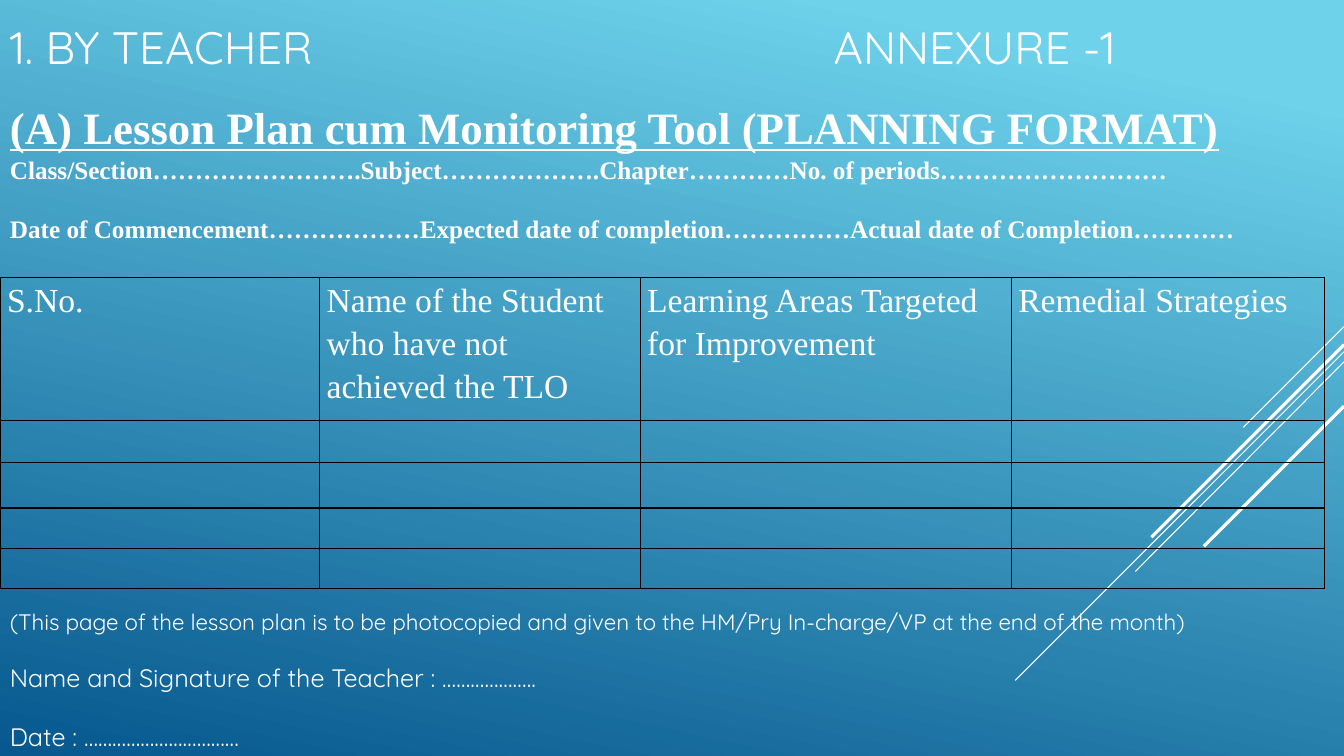
import pptx
import pptx.dml.color
import pptx.enum.shapes
import pptx.enum.text
import pptx.oxml
import pptx.oxml.ns
import pptx.util

PX = 9144  # 100 px to the inch
WHITE = pptx.dml.color.RGBColor(0xFF, 0xFF, 0xFF)
SKY = pptx.dml.color.RGBColor(0x6E, 0xD2, 0xEB)
DEEP_BLUE = pptx.dml.color.RGBColor(0x06, 0x58, 0x8E)
BORDER_HEX = "000000"
SANS = "Quicksand"
SERIF = "Times New Roman"

# x1, y1, x2, y2, width in points
RAYS = [
    (1333, 324, 1233, 424, 0.75),
    (1333, 349, 1007, 675, 0.75),
    (1333, 359, 1126, 567, 0.75),
    (1333, 342, 1142, 533, 2.25),
    (1333, 403, 1194, 542, 2.25),
]
COLUMN_WIDTHS = [317, 318, 368, 311]
ROW_HEIGHTS = [142, 42, 45, 40, 40]
HEADERS = [
    "S.No.",
    "Name of the Student who have not achieved the TLO",
    "Learning Areas Targeted for Improvement",
    "Remedial Strategies",
]


def px(length):
    return pptx.util.Emu(length * PX)


def xml_element(tag, **attributes):
    element = pptx.oxml.parse_xml(f"<{tag} {pptx.oxml.ns.nsdecls('a')}/>")
    for name, value in attributes.items():
        element.set(name, str(value))
    return element


def set_background(slide):
    fill = slide.background.fill
    fill.gradient()
    fill.gradient_angle = 258
    for stop, color, position in zip(fill.gradient_stops, (SKY, DEEP_BLUE), (0.1, 1)):
        stop.color.rgb = color
        stop.position = position


def add_ray(slide, x1, y1, x2, y2, width):
    ray = slide.shapes.add_connector(
        pptx.enum.shapes.MSO_CONNECTOR.STRAIGHT, px(x1), px(y1), px(x2), px(y2))
    ray.line.color.rgb = WHITE
    ray.line.width = pptx.util.Pt(width)
    ray._element.spPr.append(xml_element("a:effectLst"))


def style_paragraph(paragraph, font_name, size, bold=False, underline=False):
    for run in paragraph.runs:
        run.font.name = font_name
        run.font.size = pptx.util.Pt(size)
        run.font.bold = bold
        run.font.underline = underline
        run.font.color.rgb = WHITE


def add_text(slide, box, lines, font_name, anchor, bold=False, align=None):
    """Each line is (text, size, space before, underline)."""
    shape = slide.shapes.add_textbox(*map(px, box))
    frame = shape.text_frame
    frame.word_wrap = True
    frame.vertical_anchor = anchor
    frame.text = "\n".join(line[0] for line in lines)
    for paragraph, (_, size, gap, underline) in zip(frame.paragraphs, lines):
        paragraph.alignment = align
        paragraph.space_before = pptx.util.Pt(gap)
        style_paragraph(paragraph, font_name, size, bold, underline)
    return shape


def add_tab_stop(paragraph, position):
    tabs = xml_element("a:tabLst")
    tabs.append(xml_element("a:tab", pos=px(position), algn="l"))
    paragraph._p.get_or_add_pPr().append(tabs)


def style_cell(cell):
    cell.margin_left = cell.margin_right = px(7)
    cell.margin_top = cell.margin_bottom = 0
    properties = cell._tc.get_or_add_tcPr()
    for side in ("lnL", "lnR", "lnT", "lnB"):
        border = xml_element(f"a:{side}", w=pptx.util.Pt(1))
        solid = xml_element("a:solidFill")
        solid.append(xml_element("a:srgbClr", val=BORDER_HEX))
        border.append(solid)
        properties.append(border)
    cell.fill.background()


def add_student_table(slide, left, top):
    frame = slide.shapes.add_table(
        len(ROW_HEIGHTS), len(COLUMN_WIDTHS), px(left), px(top),
        px(sum(COLUMN_WIDTHS)), px(sum(ROW_HEIGHTS)))
    table = frame.table
    table.first_row = table.horz_banding = False
    for column, width in zip(table.columns, COLUMN_WIDTHS):
        column.width = px(width)
    for row, height in zip(table.rows, ROW_HEIGHTS):
        row.height = px(height)
    for cell in table.iter_cells():
        style_cell(cell)
    for cell, header in zip(table.rows[0].cells, HEADERS):
        cell.text = header
        paragraph = cell.text_frame.paragraphs[0]
        paragraph.line_spacing = 1.15
        style_paragraph(paragraph, SERIF, 24)


def main():
    presentation = pptx.Presentation()
    presentation.slide_width = px(1333)
    presentation.slide_height = px(750)
    slide = presentation.slides.add_slide(presentation.slide_layouts[6])
    middle = pptx.enum.text.MSO_ANCHOR.MIDDLE
    top = pptx.enum.text.MSO_ANCHOR.TOP

    # Background and diagonal rays
    set_background(slide)
    for ray in RAYS:
        add_ray(slide, *ray)

    # Title, with the annexure number at a tab stop
    title = add_text(slide, (0, 0, 1258, 91),
                     [("1. BY TEACHER\tANNEXURE -1", 32.4, 0, False)], SANS, middle)
    add_tab_stop(title.text_frame.paragraphs[0], 817)

    # Student table
    add_student_table(slide, 0, 275)

    # Lesson plan heading and fields
    add_text(slide, (0, 95, 1359, 151), [
        ("(A) Lesson Plan cum Monitoring Tool (PLANNING FORMAT)", 32, 0, True),
        ("Class/Section…………………….Subject……………….Chapter…………No. of periods………………………",
         18, 0, False),
        ("Date of Commencement………………Expected date of completion……………"
         "Actual date of Completion…………", 18, 21, False),
    ], SERIF, middle, bold=True, align=pptx.enum.text.PP_ALIGN.JUSTIFY)

    # Note and signature
    add_text(slide, (0, 598, 1297, 158), [
        ("(This page of the lesson plan is to be photocopied and given to the "
         "HM/Pry In-charge/VP at the end of the month)", 16, 0, False),
        ("Name and Signature of the Teacher : ………………..", 18, 20, False),
        ("Date : ……………………………", 18, 20, False),
    ], SANS, top)

    presentation.save("out.pptx")


if __name__ == "__main__":
    main()
